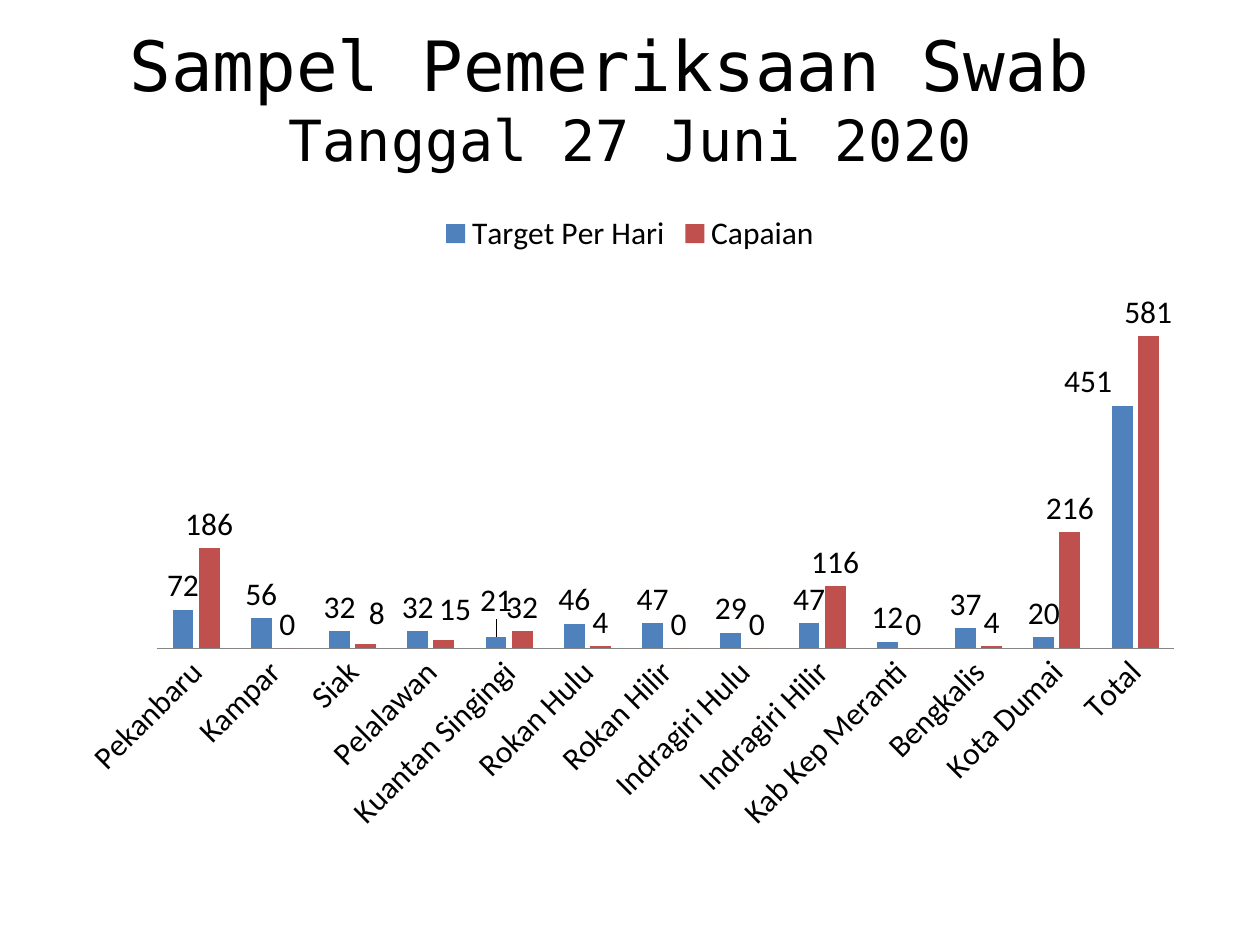
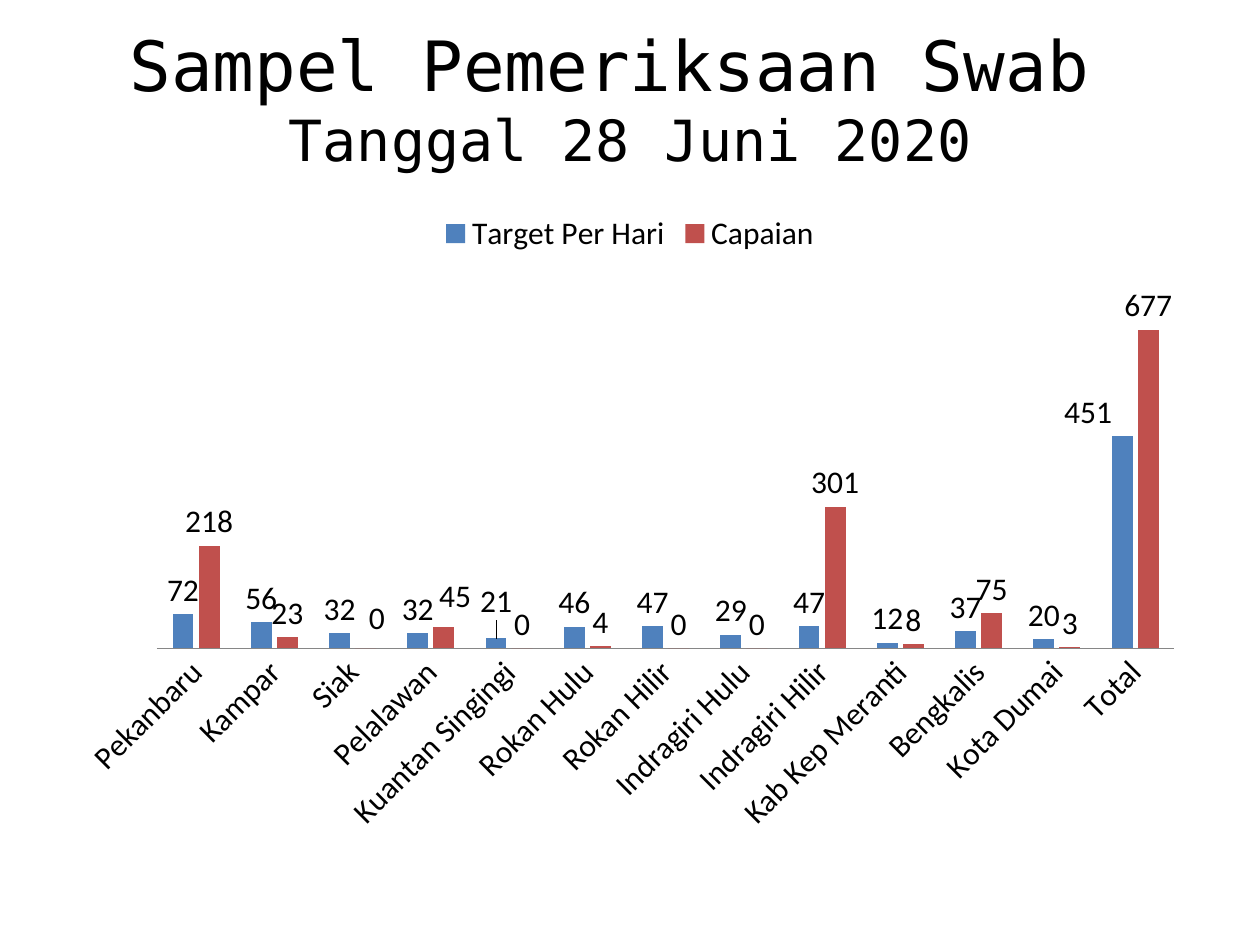
import pptx
import pptx.chart.data
import pptx.dml.color
import pptx.enum.chart
import pptx.enum.text
import pptx.oxml
import pptx.oxml.ns
import pptx.util
from lxml import etree

Pt = pptx.util.Pt

COLORS = {
    "text": "000000",
    "background": "FFFFFF",
    "target": "4F81BD",
    "achieved": "C0504D",
    "axis": "868686",
}
TITLE_FONT = "DejaVu Sans Mono"
CHART_FONT = "Calibri"

# Boxes: left, top, width, height in points
TITLE_BOX = (12, 21.6, 696, 68.4)
CHART_BOX = (36, 113.76, 648, 368.64)

DISTRICTS = [
    "Pekanbaru", "Kampar", "Siak", "Pelalawan", "Kuantan Singingi",
    "Rokan Hulu", "Rokan Hilir", "Indragiri Hulu", "Indragiri Hilir",
    "Kab Kep Meranti", "Bengkalis", "Kota Dumai", "Total",
]
TARGETS = [72, 56, 32, 32, 21, 46, 47, 29, 47, 12, 37, 20, 451]
ACHIEVED_BY_DATE = {
    "27 Juni 2020": [186, 0, 8, 15, 32, 4, 0, 0, 116, 0, 4, 216, 581],
    "28 Juni 2020": [218, 23, 0, 45, 0, 4, 0, 0, 301, 8, 75, 3, 677],
}

# Labels moved off their column: point index -> shift as a share of the chart
TARGET_SHIFTS = {4: (0, -0.02), 12: (-0.03, 0)}
ACHIEVED_SHIFTS = {2: (0.01, -0.01), 3: (0.01, -0.01)}


def rgb(name):
    return pptx.dml.color.RGBColor.from_string(COLORS[name])


def style_font(font, name, size):
    font.name = name
    font.size = Pt(size)
    font.color.rgb = rgb("text")


def add_title(slide, box, date):
    shape = slide.shapes.add_textbox(*map(Pt, box))
    frame = shape.text_frame
    frame.word_wrap = True
    frame.vertical_anchor = pptx.enum.text.MSO_ANCHOR.MIDDLE
    paragraph = frame.paragraphs[0]
    paragraph.alignment = pptx.enum.text.PP_ALIGN.CENTER

    heading = paragraph.add_run()
    heading.text = "Sampel Pemeriksaan Swab "
    style_font(heading.font, TITLE_FONT, 39.6)
    paragraph.add_line_break()
    date_line = paragraph.add_run()
    date_line.text = f"Tanggal {date}"
    style_font(date_line.font, TITLE_FONT, 32.4)


def shift_labels(series, shifts):
    outside = pptx.enum.chart.XL_LABEL_POSITION.OUTSIDE_END
    for index in shifts:
        series.points[index].data_label.position = outside
    qn = pptx.oxml.ns.qn
    for label in series.data_labels._element.findall(qn("c:dLbl")):
        index_element = label.find(qn("c:idx"))
        layout = etree.Element(qn("c:layout"))
        manual = etree.SubElement(layout, qn("c:manualLayout"))
        for axis, share in zip("xy", shifts[int(index_element.get("val"))]):
            etree.SubElement(manual, qn(f"c:{axis}")).set("val", str(share))
        index_element.addnext(layout)


def style_series(series, color, shifts):
    series.format.fill.solid()
    series.format.fill.fore_color.rgb = rgb(color)
    series.invert_if_negative = False
    labels = series.data_labels
    labels.show_value = True
    labels.position = pptx.enum.chart.XL_LABEL_POSITION.OUTSIDE_END
    shift_labels(series, shifts)


def add_swab_chart(slide, box, achieved):
    data = pptx.chart.data.CategoryChartData()
    data.categories = DISTRICTS
    data.add_series("Target Per Hari", TARGETS)
    data.add_series("Capaian", achieved)
    chart = slide.shapes.add_chart(
        pptx.enum.chart.XL_CHART_TYPE.COLUMN_CLUSTERED, *map(Pt, box), data
    ).chart
    style_font(chart.font, CHART_FONT, 18)
    chart.has_title = False

    # Legend
    chart.has_legend = True
    chart.legend.position = pptx.enum.chart.XL_LEGEND_POSITION.TOP
    chart.legend.include_in_layout = False

    # Axes
    no_ticks = pptx.enum.chart.XL_TICK_MARK.NONE
    chart.category_axis.major_tick_mark = no_ticks
    chart.category_axis.minor_tick_mark = no_ticks
    chart.category_axis.format.line.color.rgb = rgb("axis")
    chart.category_axis.format.line.width = Pt(0.75)
    chart.value_axis.has_major_gridlines = False
    chart.value_axis.visible = False

    # Columns
    plot = chart.plots[0]
    plot.vary_by_categories = False
    plot.gap_width = 150
    plot.overlap = -25
    target_series, achieved_series = plot.series
    style_series(target_series, "target", TARGET_SHIFTS)
    style_series(achieved_series, "achieved", ACHIEVED_SHIFTS)


def add_daily_slide(presentation, date, achieved):
    slide = presentation.slides.add_slide(presentation.slide_layouts[6])
    slide.background.fill.solid()
    slide.background.fill.fore_color.rgb = rgb("background")
    add_title(slide, TITLE_BOX, date)
    add_swab_chart(slide, CHART_BOX, achieved)


def main():
    presentation = pptx.Presentation()
    presentation.slide_width = Pt(720)
    presentation.slide_height = Pt(540)
    for date, achieved in ACHIEVED_BY_DATE.items():
        add_daily_slide(presentation, date, achieved)
    presentation.save("out.pptx")


if __name__ == "__main__":
    main()
